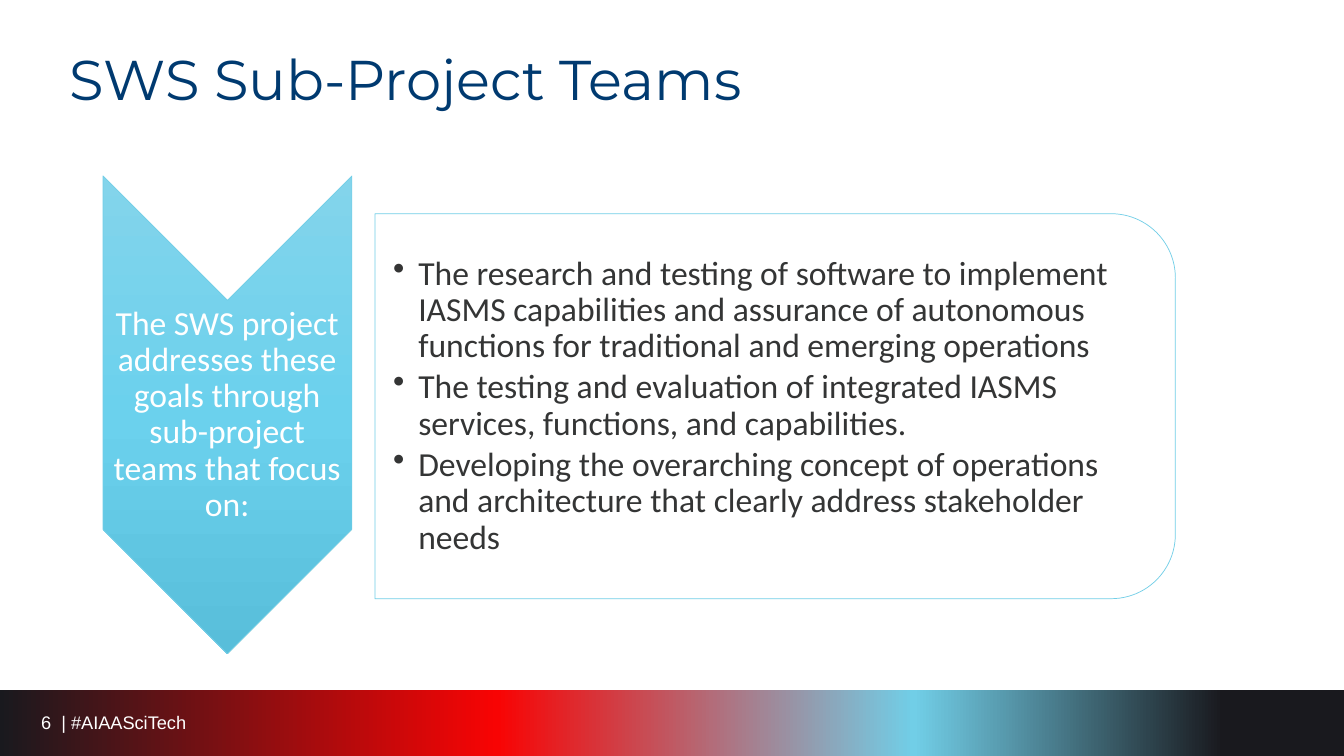
"""Build the SWS Sub-Project Teams slide."""
import lxml.etree
import pptx
import pptx.dml.color
import pptx.enum.shapes
import pptx.enum.text
import pptx.oxml.ns
import pptx.util

Pt = pptx.util.Pt
RGBColor = pptx.dml.color.RGBColor
SHAPES = pptx.enum.shapes.MSO_SHAPE
ANCHOR = pptx.enum.text.MSO_ANCHOR
ALIGN = pptx.enum.text.PP_ALIGN
qn = pptx.oxml.ns.qn

WHITE = RGBColor(0xFF, 0xFF, 0xFF)
NAVY = RGBColor(0x00, 0x3A, 0x70)
CHARCOAL = RGBColor(0x34, 0x35, 0x35)
BLACK = RGBColor(0x19, 0x19, 0x1E)
RED = RGBColor(0xF8, 0x04, 0x04)
SKY = RGBColor(0x71, 0xCE, 0xE7)
SKY_LIGHT = RGBColor(0x83, 0xD4, 0xEB)
SKY_MID = RGBColor(0x6B, 0xD1, 0xED)
SKY_DARK = RGBColor(0x58, 0xBE, 0xDA)

FOOTER_STOPS = [(0, BLACK), (37, RED), (68, SKY), (91, BLACK)]
CHEVRON_STOPS = [(0, SKY_LIGHT), (50, SKY_MID), (100, SKY_DARK)]

GOAL = "The SWS project addresses these goals through sub-project teams that focus on:"
FOCUS_AREAS = [
    "The research and testing of software to implement IASMS capabilities and "
    "assurance of autonomous functions for traditional and emerging operations",
    "The testing and evaluation of integrated IASMS services, functions, and capabilities.",
    "Developing the overarching concept of operations and architecture that "
    "clearly address stakeholder needs",
]


def add_panel(page, kind, bounds, rotation=0, outline=None):
    """Add a shadowless preset shape, with a thin outline if one is given."""
    panel = page.shapes.add_shape(kind, *map(Pt, bounds))
    panel.rotation = rotation
    panel.shadow.inherit = False
    if outline is None:
        panel.line.fill.background()
    else:
        panel.line.color.rgb = outline
        panel.line.width = Pt(0.5)
    return panel


def fill_gradient(panel, stops):
    """Fill a shape with a gradient along its own horizontal axis."""
    panel.fill.gradient()
    panel.fill.gradient_angle = 0
    stop_list = panel.fill._xPr.find(".//" + qn("a:gsLst"))
    for old_stop in list(stop_list):
        stop_list.remove(old_stop)
    for percent, color in stops:
        stop = lxml.etree.SubElement(stop_list, qn("a:gs"), pos=str(percent * 1000))
        lxml.etree.SubElement(stop, qn("a:srgbClr"), val=str(color))


def fill_translucent(panel, color, percent):
    """Fill a shape with a solid colour at the given opacity."""
    panel.fill.solid()
    panel.fill.fore_color.rgb = color
    tint = panel.fill._xPr.find(qn("a:solidFill")).find(qn("a:srgbClr"))
    lxml.etree.SubElement(tint, qn("a:alpha"), val=str(percent * 1000))


def add_bullet(para, indent):
    """Give a paragraph a round bullet with a hanging indent."""
    properties = para._p.get_or_add_pPr()
    properties.set("marL", str(Pt(indent)))
    properties.set("indent", str(-Pt(indent)))
    lxml.etree.SubElement(properties, qn("a:buChar"), char="•")


def add_text(page, bounds, texts, font, size, color, anchor=ANCHOR.TOP,
             align=ALIGN.LEFT, spacing=1.0, after=0, insets=None, bulleted=False):
    """Add a wrapping text box with one paragraph per text."""
    box = page.shapes.add_textbox(*map(Pt, bounds))
    frame = box.text_frame
    frame.word_wrap = True
    frame.vertical_anchor = anchor
    if insets:
        (frame.margin_left, frame.margin_top,
         frame.margin_right, frame.margin_bottom) = map(Pt, insets)
    for index, text in enumerate(texts):
        para = frame.add_paragraph() if index else frame.paragraphs[0]
        para.alignment = align
        para.line_spacing = spacing
        para.space_after = Pt(after)
        if bulleted:
            add_bullet(para, 18)
        span = para.add_run()
        span.text = text
        span.font.name = font
        span.font.size = Pt(size)
        span.font.color.rgb = color


def main():
    """Assemble the slide and save it."""
    deck = pptx.Presentation()
    deck.slide_width, deck.slide_height = Pt(960), Pt(540)
    page = deck.slides.add_slide(deck.slide_layouts[6])

    footer = add_panel(page, SHAPES.RECTANGLE, (0, 493.2, 960, 46.8))
    fill_gradient(footer, FOOTER_STOPS)
    add_text(page, (22.3, 504.7, 480, 23), ["6  | #AIAASciTech"], "Arial", 13, WHITE)
    add_text(page, (42.5, 26.6, 875.5, 64.8), ["SWS Sub-Project Teams"],
             "Montserrat", 40, NAVY, ANCHOR.MIDDLE, spacing=0.9)

    chevron = add_panel(page, SHAPES.CHEVRON, (-8.2, 207.4, 341.3, 177.8), 90, SKY)
    fill_gradient(chevron, CHEVRON_STOPS)
    add_text(page, (73.4, 214.6, 177.8, 163.4), [GOAL], "Calibri", 24, WHITE,
             ANCHOR.MIDDLE, ALIGN.CENTER, 0.9, 8.4, (1.2, 1.2, 1.2, 1.2))

    card = add_panel(page, SHAPES.ROUND_2_SAME_RECTANGLE, (416.2, 4.3, 275, 571.7), 90, SKY)
    fill_translucent(card, WHITE, 90)
    add_text(page, (267.1, 166.3, 558.7, 247.7), FOCUS_AREAS, "Calibri", 24, CHARCOAL,
             ANCHOR.MIDDLE, spacing=0.9, after=3.6, insets=(13.7, 1.2, 1.2, 1.2),
             bulleted=True)

    deck.save("out.pptx")


if __name__ == "__main__":
    main()
